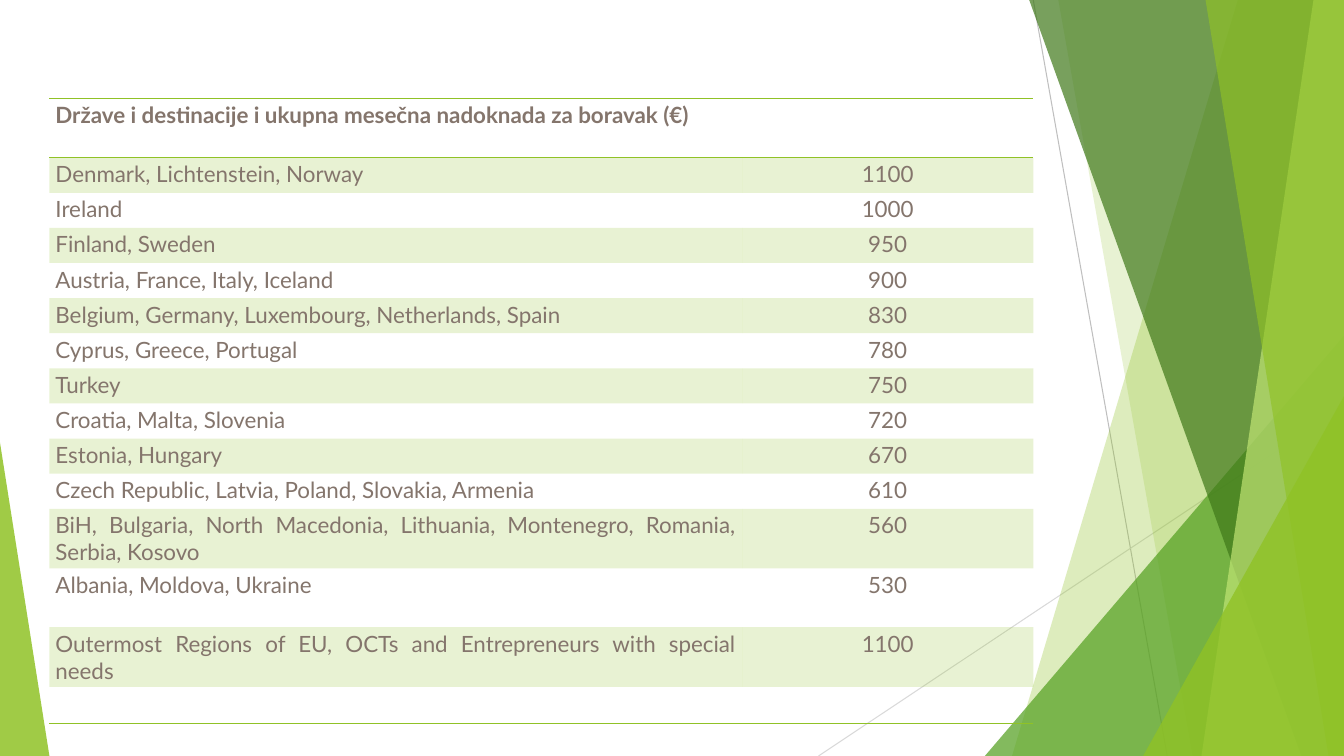
from lxml import etree
from pptx import Presentation
from pptx.dml.color import RGBColor
from pptx.enum.shapes import MSO_CONNECTOR, MSO_SHAPE
from pptx.enum.text import PP_ALIGN
from pptx.oxml.ns import qn
from pptx.util import Inches, Pt

STRAIGHT = MSO_CONNECTOR.STRAIGHT
TRIANGLE = MSO_SHAPE.ISOSCELES_TRIANGLE
LEFT, CENTER, JUSTIFY = PP_ALIGN.LEFT, PP_ALIGN.CENTER, PP_ALIGN.JUSTIFY

LIME = RGBColor(0x90, 0xC2, 0x26)
PALE_LIME = RGBColor(0xC0, 0xE4, 0x74)
GREEN = RGBColor(0x54, 0xA0, 0x21)
DARK_GREEN = RGBColor(0x3F, 0x78, 0x19)
GREY = RGBColor(0xBF, 0xBF, 0xBF)
LIGHT_GREY = RGBColor(0xD9, 0xD9, 0xD9)
TEXT_BROWN = RGBColor(0x84, 0x75, 0x6C)

FONT = "Lato"
NO_STYLE_NO_GRID = "{2D5ABB26-0587-4C30-8999-92F81FD0307C}"
SLIDE_WIDTH, SLIDE_HEIGHT = Inches(13.333), Inches(7.5)

TABLE_LEFT, TABLE_TOP = 3.68, 13.07
COLUMN_WIDTHS = (51.53, 21.68)
SINGLE_ROW, DOUBLE_ROW = 4.65, 7.78
HEADING = "Države i destinacije i ukupna mesečna nadoknada za boravak (€)"
ALLOWANCES = [
    ("Denmark, Lichtenstein, Norway", "1100", SINGLE_ROW),
    ("Ireland", "1000", SINGLE_ROW),
    ("Finland, Sweden", "950", SINGLE_ROW),
    ("Austria, France, Italy, Iceland", "900", SINGLE_ROW),
    ("Belgium, Germany, Luxembourg, Netherlands, Spain", "830", SINGLE_ROW),
    ("Cyprus, Greece, Portugal", "780", SINGLE_ROW),
    ("Turkey", "750", SINGLE_ROW),
    ("Croatia, Malta, Slovenia", "720", SINGLE_ROW),
    ("Estonia, Hungary", "670", SINGLE_ROW),
    ("Czech Republic, Latvia, Poland, Slovakia, Armenia", "610", SINGLE_ROW),
    ("BiH, Bulgaria, North Macedonia, Lithuania, Montenegro, Romania, "
     "Serbia, Kosovo", "560", DOUBLE_ROW),
    ("Albania, Moldova, Ukraine", "530", DOUBLE_ROW),
    ("Outermost Regions of EU, OCTs and Entrepreneurs with special needs",
     "1100", DOUBLE_ROW),
]


def across(percent):
    """Length as a percentage of the slide's width."""
    return round(SLIDE_WIDTH * percent / 100)


def down(percent):
    """Length as a percentage of the slide's height."""
    return round(SLIDE_HEIGHT * percent / 100)


def fill_solid(fill, color, opacity):
    """Fill with a colour at an opacity given in percent."""
    fill.solid()
    fill.fore_color.rgb = color
    color_element = fill._xPr.find(qn("a:solidFill"))[0]
    etree.SubElement(color_element, qn("a:alpha"), val=str(opacity * 1000))


def finish_facet(shape, color, opacity):
    shape.shadow.inherit = False
    shape.line.fill.background()
    fill_solid(shape.fill, color, opacity)


def add_hairline(slide, start, end, color):
    line = slide.shapes.add_connector(
        STRAIGHT, across(start[0]), down(start[1]), across(end[0]), down(end[1]))
    line.line.color.rgb = color
    line.line.width = Pt(0.75)
    etree.SubElement(line._element.spPr, qn("a:effectLst"))


def add_band(slide, top_x, bottom_x, color, opacity):
    """Full-height facet from a slanted left edge to the slide's right edge."""
    builder = slide.shapes.build_freeform(across(top_x), 0)
    builder.add_line_segments([
        (SLIDE_WIDTH, 0), (SLIDE_WIDTH, SLIDE_HEIGHT),
        (across(bottom_x), SLIDE_HEIGHT)])
    finish_facet(builder.convert_to_shape(), color, opacity)


def add_corner(slide, left, right, top, apex, color, opacity):
    """Triangle standing on the slide's bottom edge; apex 0 is left, 1 right."""
    shape = slide.shapes.add_shape(
        TRIANGLE, across(left), down(top), across(right - left), down(100 - top))
    shape.adjustments[0] = apex
    finish_facet(shape, color, opacity)


def add_cell_borders(cell, edges):
    """Draw 1 pt lime borders on the named edges."""
    properties = cell._tc.get_or_add_tcPr()
    for index, edge in enumerate(edges):
        border = etree.Element(qn(f"a:{edge}"), w=str(Pt(1)))
        fill = etree.SubElement(border, qn("a:solidFill"))
        etree.SubElement(fill, qn("a:srgbClr"), val=str(LIME))
        properties.insert(index, border)


def write_cell(cell, text, alignment, bold=False):
    cell.text = text
    paragraph = cell.text_frame.paragraphs[0]
    paragraph.alignment = alignment
    font = paragraph.font
    font.name, font.size, font.bold = FONT, Pt(16), bold
    font.color.rgb = TEXT_BROWN


def add_allowance_table(slide):
    heights = [DOUBLE_ROW, *(row[2] for row in ALLOWANCES), SINGLE_ROW]
    frame = slide.shapes.add_table(
        len(heights), len(COLUMN_WIDTHS), across(TABLE_LEFT), down(TABLE_TOP),
        across(sum(COLUMN_WIDTHS)), down(sum(heights)))
    table = frame.table
    table.first_row = table.horz_banding = False
    table._tbl.tblPr.find(qn("a:tableStyleId")).text = NO_STYLE_NO_GRID
    for column, width in zip(table.columns, COLUMN_WIDTHS):
        column.width = across(width)
    for row, height in zip(table.rows, heights):
        row.height = down(height)

    for cell in table.iter_cells():
        cell.margin_left = cell.margin_right = Inches(0.06)
        cell.margin_top = cell.margin_bottom = Inches(0.03)
        cell.fill.background()
    for index, (countries, amount, _) in enumerate(ALLOWANCES, start=1):
        country_cell, amount_cell = table.rows[index].cells
        write_cell(country_cell, countries, JUSTIFY)
        write_cell(amount_cell, amount, CENTER)
        if index % 2:
            fill_solid(country_cell.fill, LIME, 20)
            fill_solid(amount_cell.fill, LIME, 20)

    heading = table.cell(0, 0)
    heading.merge(table.cell(0, 1))
    write_cell(heading, HEADING, LEFT, bold=True)
    for cell in table.rows[0].cells:
        add_cell_borders(cell, ("lnT", "lnB"))
    for cell in table.rows[len(heights) - 1].cells:
        add_cell_borders(cell, ("lnB",))


def add_facets(slide):
    add_hairline(slide, (76.88, 0), (86.85, 100), GREY)
    add_hairline(slide, (100, 53.73), (60.9, 100), LIGHT_GREY)
    add_band(slide, 92.1, 75.3, LIME, 30)
    add_band(slide, 78.75, 88.73, LIME, 20)
    add_corner(slide, 73.28, 100, 44.4, 1, GREEN, 72)
    add_band(slide, 76.58, 96.83, DARK_GREEN, 70)
    add_band(slide, 97.73, 89.4, PALE_LIME, 70)
    add_band(slide, 89.7, 98.85, LIME, 65)
    add_corner(slide, 85.05, 100, 52.4, 1, LIME, 80)
    add_corner(slide, 0, 3.68, 58.53, 0, LIME, 85)


def main():
    presentation = Presentation()
    presentation.slide_width = SLIDE_WIDTH
    presentation.slide_height = SLIDE_HEIGHT
    slide = presentation.slides.add_slide(presentation.slide_layouts[6])
    add_facets(slide)
    add_allowance_table(slide)
    presentation.save("out.pptx")


if __name__ == "__main__":
    main()
